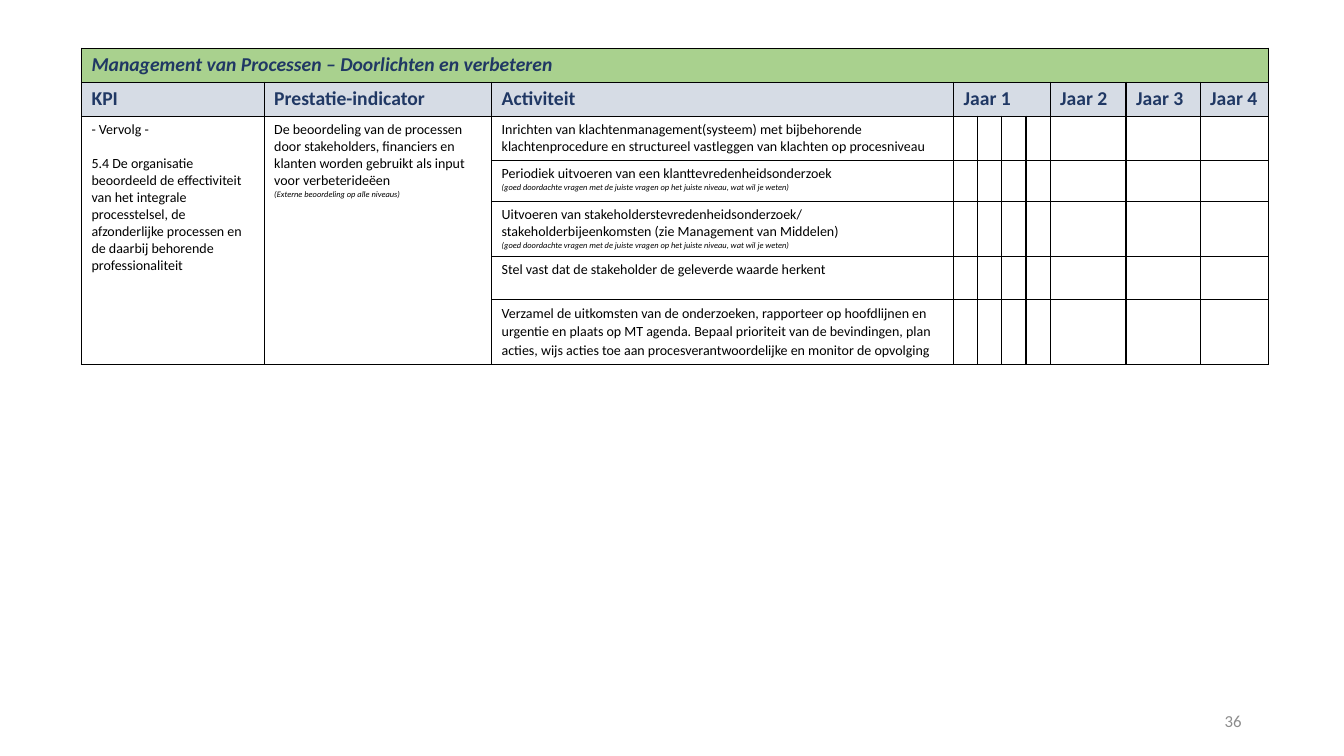
from lxml.etree import SubElement
from pptx import Presentation
from pptx.dml.color import RGBColor as RGB
from pptx.enum.text import MSO_ANCHOR as Anchor, PP_ALIGN as Align
from pptx.oxml.ns import qn
from pptx.util import Pt

COLORS = {"title": "A9D18E", "header": "D6DCE5", "navy": "203864",
          "black": "000000", "gray": "8C8C8C"}
FONTS = {
    "title": {"size": Pt(14), "bold": True, "italic": True},
    "header": {"size": Pt(14), "bold": True, "italic": False},
    "body": {"size": Pt(10), "bold": False, "italic": False},
    "note": {"size": Pt(6), "bold": False, "italic": True},
    "number": {"size": Pt(12)},
}
INKS = {"title": "navy", "header": "navy", "body": "black", "note": "black", "number": "gray"}

TITLE = "Management van Processen – Doorlichten en verbeteren"
HEADERS = {0: "KPI", 1: "Prestatie-indicator", 2: "Activiteit", 3: "Jaar 1",
           7: "Jaar 2", 8: "Jaar 3", 9: "Jaar 4"}
KPI = [
    ("- Vervolg -", "body", {}),
    ("5.4 De organisatie beoordeeld de effectiviteit van het integrale processtelsel, "
     "de afzonderlijke processen en de daarbij behorende professionaliteit",
     "body", {"space_before": Pt(12.2)}),
]
INDICATOR = [
    ("De beoordeling van de processen door stakeholders, financiers en klanten "
     "worden gebruikt als input voor verbeterideëen", "body", {}),
    ("(Externe beoordeling op alle niveaus)", "note", {}),
]
QUESTIONS = ("(goed doordachte vragen met de juiste vragen op het juiste niveau, "
             "wat wil je weten)", "note", {})
ACTIVITIES = [
    [("Inrichten van klachtenmanagement(systeem) met bijbehorende klachtenprocedure "
      "en structureel vastleggen van klachten op procesniveau", "body", {})],
    [("Periodiek uitvoeren van een klanttevredenheidsonderzoek", "body", {}), QUESTIONS],
    [("Uitvoeren van stakeholderstevredenheidsonderzoek/ stakeholderbijeenkomsten "
      "(zie Management van Middelen)", "body", {}), QUESTIONS],
    [("Stel vast dat de stakeholder de geleverde waarde herkent", "body", {})],
    [("Verzamel de uitkomsten van de onderzoeken, rapporteer op hoofdlijnen en urgentie "
      "en plaats op MT agenda. Bepaal prioriteit van de bevindingen, plan acties, wijs "
      "acties toe aan procesverantwoordelijke en monitor de opvolging", "body",
      {"line_spacing": 1.07, "space_after": Pt(8)})],
]
QUARTERS = 4
COL_WIDTHS = [130.5, 162.5, 330] + [17.15] * QUARTERS + [54.3, 52.9, 48.6]
ROW_HEIGHTS = [24.3, 24.3, 31.4, 29.3, 39.3, 30.7, 46.4]
FIRST = 2  # first activity row


def write(tf, paragraphs):
    """Fill a text frame with (text, style, paragraph format) tuples."""
    for i, (text, style, layout) in enumerate(paragraphs):
        p = tf.add_paragraph() if i else tf.paragraphs[0]
        for name, value in layout.items():
            setattr(p, name, value)
        r = p.add_run()
        r.text = text
        r.font.name = "Calibri"
        r.font.color.rgb = RGB.from_string(COLORS[INKS[style]])
        for name, value in FONTS[style].items():
            setattr(r.font, name, value)


def add_borders(cell):
    tcPr = cell._tc.get_or_add_tcPr()
    for side in ("a:lnL", "a:lnR", "a:lnT", "a:lnB"):
        ln = SubElement(tcPr, qn(side), w=str(Pt(1)))
        fill = SubElement(ln, qn("a:solidFill"))
        SubElement(fill, qn("a:srgbClr"), val=COLORS["black"])


def add_plan(slide):
    rows, cols = len(ROW_HEIGHTS), len(COL_WIDTHS)
    table = slide.shapes.add_table(rows, cols, Pt(58.2), Pt(34.5),
                                   Pt(sum(COL_WIDTHS)), Pt(sum(ROW_HEIGHTS))).table
    table.first_row = table.horz_banding = False
    for column, width in zip(table.columns, COL_WIDTHS):
        column.width = Pt(width)
    for row, height in zip(table.rows, ROW_HEIGHTS):
        row.height = Pt(height)

    fills = {0: "title", 1: "header"}
    for r in range(rows):
        for c in range(cols):
            cell = table.cell(r, c)
            add_borders(cell)
            if r in fills:
                cell.fill.solid()
                cell.fill.fore_color.rgb = RGB.from_string(COLORS[fills[r]])
            else:
                cell.fill.background()

    table.cell(0, 0).merge(table.cell(0, cols - 1))
    table.cell(1, 3).merge(table.cell(1, 2 + QUARTERS))
    for c in (0, 1):
        table.cell(FIRST, c).merge(table.cell(rows - 1, c))

    write(table.cell(0, 0).text_frame, [(TITLE, "title", {})])
    for c, label in HEADERS.items():
        write(table.cell(1, c).text_frame, [(label, "header", {})])
    write(table.cell(FIRST, 0).text_frame, KPI)
    write(table.cell(FIRST, 1).text_frame, INDICATOR)
    for r, activity in enumerate(ACTIVITIES, FIRST):
        write(table.cell(r, 2).text_frame, activity)


def add_page_number(slide):
    tf = slide.shapes.add_textbox(Pt(678), Pt(500.5), Pt(216), Pt(28.8)).text_frame
    tf.word_wrap = True
    tf.vertical_anchor = Anchor.MIDDLE
    write(tf, [("36", "number", {"alignment": Align.RIGHT})])


def main():
    prs = Presentation()
    prs.slide_width, prs.slide_height = Pt(960), Pt(540)
    slide = prs.slides.add_slide(prs.slide_layouts[6])
    add_plan(slide)
    add_page_number(slide)
    prs.save("out.pptx")


if __name__ == "__main__":
    main()
